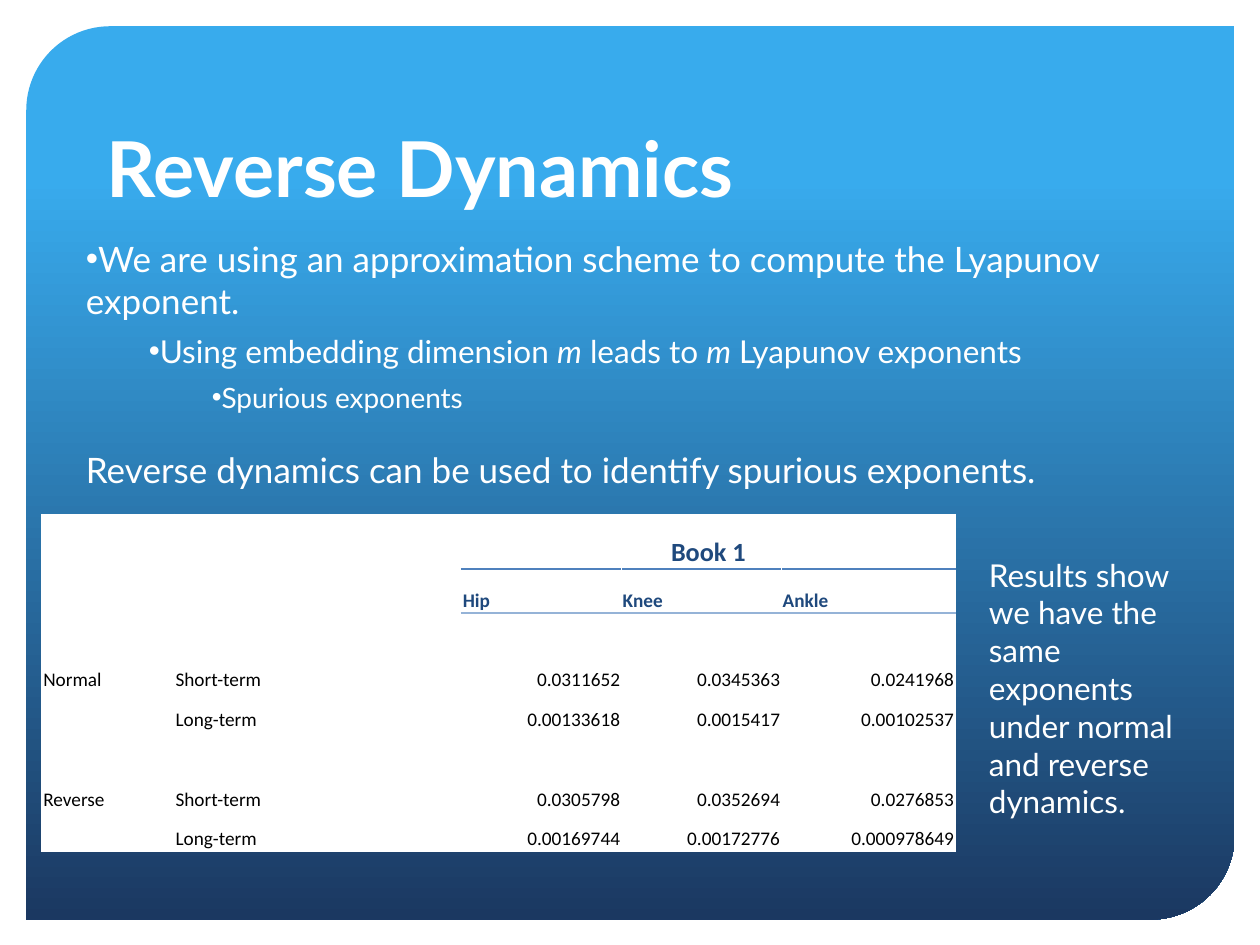
from lxml.etree import SubElement
from pptx import Presentation
from pptx.dml.color import RGBColor
from pptx.enum.shapes import MSO_SHAPE as Shape
from pptx.enum.text import MSO_ANCHOR as Anchor, PP_ALIGN as Align
from pptx.oxml.ns import qn
from pptx.util import Pt

COLORS = {
    "white": "FFFFFF", "black": "000000", "sky": "38ABED", "navy": "1B3861",
    "heading": "1F497D", "heavy_rule": "4F81BD", "light_rule": "95B3D7",
}
HEAVY_RULE = ("heavy_rule", 1.5)
LIGHT_RULE = ("light_rule", 1)

# Each paragraph: level, size, space before, bulleted, [(text, italic)]
BODY = [
    (0, 20, 0, True, [("We are using an approximation scheme to compute the Lyapunov exponent.", False)]),
    (1, 18, 6, True, [("Using embedding dimension ", False), ("m", True), (" leads to ", False),
                      ("m", True), (" Lyapunov exponents", False)]),
    (2, 16, 6, True, [("Spurious exponents", False)]),
    (0, 20, 20, False, [("Reverse dynamics can be used to identify spurious exponents.", False)]),
]
COLUMN_WIDTHS = [75.6, 88.6, 75.6, 91.4, 91.4, 99.4]
ROW_HEIGHTS = [31, 25.2] + [22.7] * 6
FIRST_VALUE_COLUMN = 3
EXPONENTS = [
    ["", "", "", "Book 1", "", ""],
    ["", "", "", "Hip", "Knee", "Ankle"],
    [""] * 6,
    ["Normal", "Short-term", "", "0.0311652", "0.0345363", "0.0241968"],
    ["", "Long-term", "", "0.00133618", "0.0015417", "0.00102537"],
    [""] * 6,
    ["Reverse", "Short-term", "", "0.0305798", "0.0352694", "0.0276853"],
    ["", "Long-term", "", "0.00169744", "0.00172776", "0.000978649"],
]
# Rules above and below the value columns, by row
ROW_RULES = {
    0: {"a:lnB": HEAVY_RULE},
    1: {"a:lnT": HEAVY_RULE, "a:lnB": LIGHT_RULE},
    2: {"a:lnT": LIGHT_RULE},
}


def rgb(name):
    return RGBColor.from_string(COLORS[name])


def add_run(paragraph, text, size, color="white", font="Lato", bold=False, italic=False):
    run = paragraph.add_run()
    run.text = text
    run.font.name = font
    run.font.size = Pt(size)
    run.font.color.rgb = rgb(color)
    run.font.bold = bold
    run.font.italic = italic


def add_text_frame(slide, box, anchor=Anchor.TOP):
    frame = slide.shapes.add_textbox(*map(Pt, box)).text_frame
    frame.word_wrap = True
    frame.vertical_anchor = anchor
    return frame


def add_panel(slide, box):
    panel = slide.shapes.add_shape(Shape.ROUND_2_DIAG_RECTANGLE, *map(Pt, box))
    panel.shadow.inherit = False
    panel.adjustments[0] = 0.094
    panel.adjustments[1] = 0
    panel.line.fill.background()
    panel.fill.gradient()
    panel.fill.gradient_angle = 270
    for stop, position, color in zip(panel.fill.gradient_stops, (0.17, 1), ("sky", "navy")):
        stop.position = position
        stop.color.rgb = rgb(color)


def add_title(slide, box):
    frame = add_text_frame(slide, box, Anchor.BOTTOM)
    add_run(frame.paragraphs[0], "Reverse Dynamics", 44, bold=True)


def add_body(slide, box):
    frame = add_text_frame(slide, box)
    for index, (level, size, space_before, bulleted, runs) in enumerate(BODY):
        paragraph = frame.add_paragraph() if index else frame.paragraphs[0]
        paragraph.level = level
        paragraph.space_before = Pt(space_before)
        properties = paragraph._p.get_or_add_pPr()
        properties.set("marL", str(Pt(36 * level)))
        properties.set("indent", "0")
        if bulleted:
            SubElement(properties, qn("a:buFont")).set("typeface", "Arial")
            SubElement(properties, qn("a:buChar")).set("char", "•")
        for text, italic in runs:
            add_run(paragraph, text, size, italic=italic)


def add_rule(cell, side, color, width):
    line = SubElement(cell._tc.get_or_add_tcPr(), qn(side), w=str(Pt(width)))
    fill = SubElement(line, qn("a:solidFill"))
    SubElement(fill, qn("a:srgbClr"), val=COLORS[color])


def fill_cell(cell, text, row, column):
    is_value = column >= FIRST_VALUE_COLUMN
    if is_value:
        for side, (color, width) in ROW_RULES.get(row, {}).items():
            add_rule(cell, side, color, width)
    cell.fill.solid()
    cell.fill.fore_color.rgb = rgb("white")
    cell.vertical_anchor = Anchor.BOTTOM
    cell.margin_left = cell.margin_right = cell.margin_top = Pt(0.72)
    cell.margin_bottom = 0
    paragraph = cell.text_frame.paragraphs[0]
    paragraph.font.size = Pt(11)
    if not text:
        return
    is_heading = row < 2
    if row == 0:
        paragraph.alignment = Align.CENTER
    elif is_value and not is_heading:
        paragraph.alignment = Align.RIGHT
    add_run(paragraph, text, 15 if row == 0 else 11,
            "heading" if is_heading else "black", "Calibri", bold=is_heading)


def add_exponent_table(slide, left, top):
    table = slide.shapes.add_table(
        len(ROW_HEIGHTS), len(COLUMN_WIDTHS), Pt(left), Pt(top),
        Pt(sum(COLUMN_WIDTHS)), Pt(sum(ROW_HEIGHTS))).table
    table.first_row = table.horz_banding = False
    for column, width in zip(table.columns, COLUMN_WIDTHS):
        column.width = Pt(width)
    for row, height in zip(table.rows, ROW_HEIGHTS):
        row.height = Pt(height)
    table.cell(0, FIRST_VALUE_COLUMN).merge(table.cell(0, len(COLUMN_WIDTHS) - 1))
    for row, texts in enumerate(EXPONENTS):
        for column, text in enumerate(texts):
            fill_cell(table.cell(row, column), text, row, column)


def add_conclusion(slide, box):
    frame = add_text_frame(slide, box)
    add_run(frame.paragraphs[0],
            "Results show we have the same exponents under normal and reverse dynamics.", 18)


def main():
    presentation = Presentation()
    presentation.slide_width, presentation.slide_height = Pt(720), Pt(540)
    slide = presentation.slides.add_slide(presentation.slide_layouts[6])
    add_panel(slide, (15, 15, 690.5, 510.5))
    add_title(slide, (54, 18, 597, 107.3))
    add_body(slide, (42, 132, 636, 342))
    add_exponent_table(slide, 24, 294)
    add_conclusion(slide, (558, 314, 132, 160))
    presentation.save("out.pptx")


if __name__ == "__main__":
    main()
